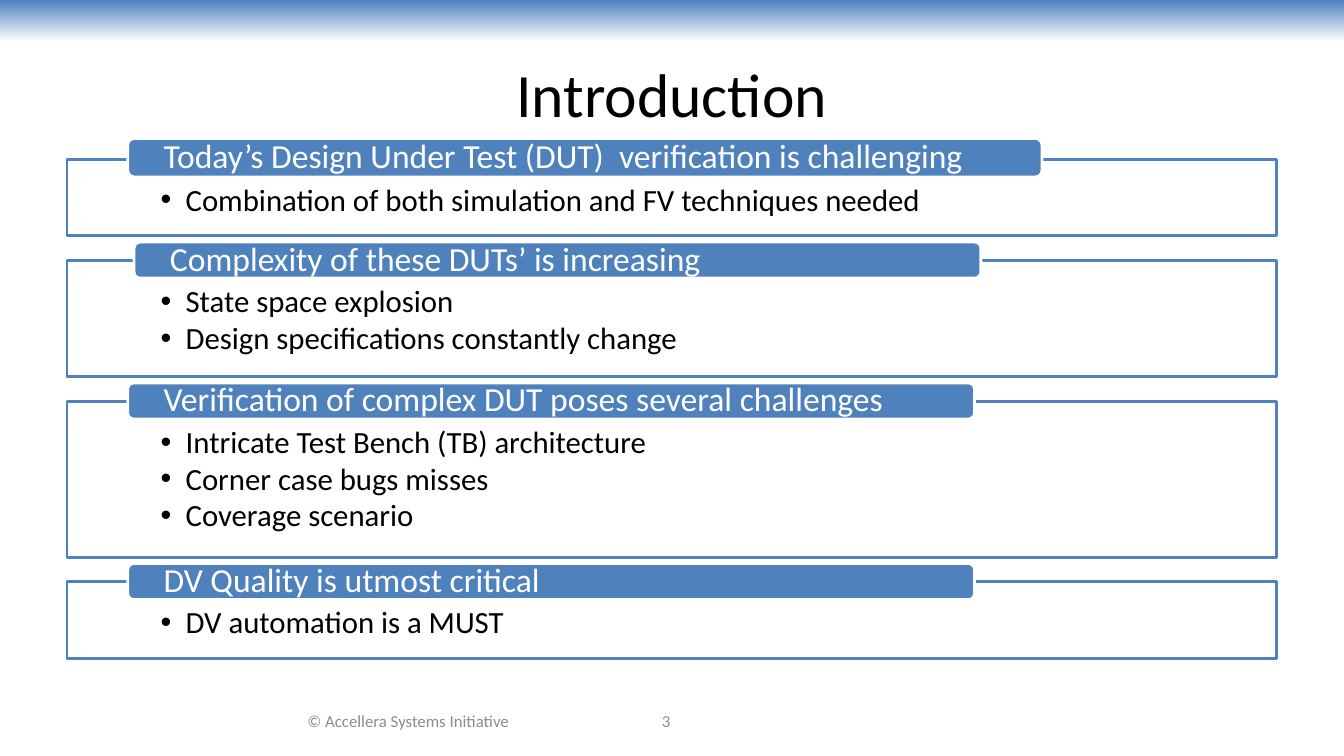
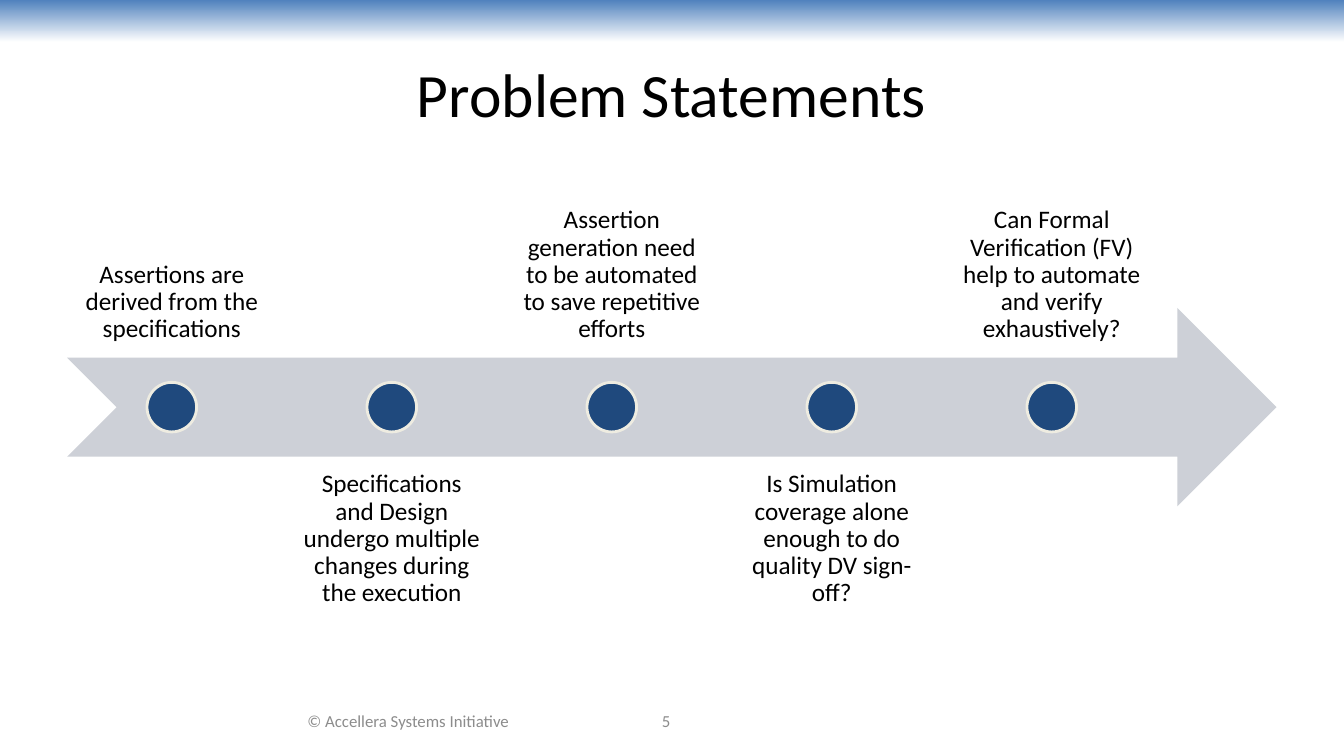
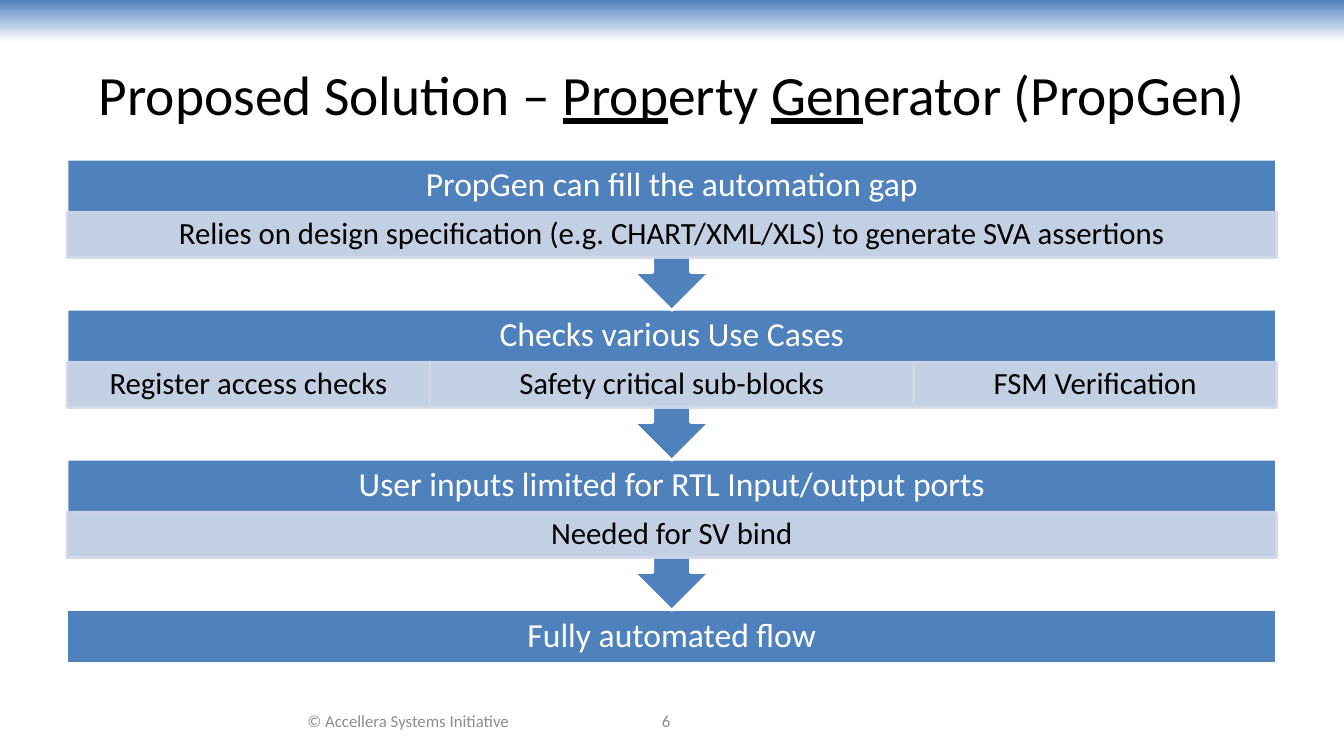
from lxml.etree import SubElement
from pptx import Presentation
from pptx.dml.color import RGBColor
from pptx.enum.shapes import MSO_SHAPE
from pptx.enum.text import MSO_ANCHOR, MSO_AUTO_SIZE, PP_ALIGN
from pptx.oxml.ns import qn
from pptx.util import Cm, Pt

COLORS = {
    "blue": "4F81BD", "navy": "1F497D", "cream": "EEECE1", "pale": "D0D8E8",
    "arrow": "CDD0D7", "footer": "8C8C8C", "white": "FFFFFF", "black": "000000",
}
FONT = "Calibri"
PAGE_WIDTH, PAGE_HEIGHT = 33.87, 19.05
LEFT, TOP, WIDTH = 1.69, 4.01, 30.48
FOOTER = "© Accellera Systems Initiative"

TOPICS = [
    ("Today’s Design Under Test (DUT)  verification is challenging", (3.22, 23.04, 0.97),
     ["Combination of both simulation and FV techniques needed"]),
    ("Complexity of these DUTs’ is increasing", (3.38, 21.34, 0.91),
     ["State space explosion", "Design specifications constantly change"]),
    ("Verification of complex DUT poses several challenges", (3.22, 21.34, 0.91),
     ["Intricate Test Bench (TB) architecture", "Corner case bugs misses", "Coverage scenario"]),
    ("DV Quality is utmost critical", (3.22, 21.34, 0.91),
     ["DV automation is a MUST"]),
]
PROBLEMS = [
    "Assertions are derived from the specifications",
    "Specifications and Design undergo multiple changes during the execution",
    "Assertion generation need to be automated to save repetitive efforts",
    "Is Simulation coverage alone enough to do quality DV sign-off?",
    "Can Formal Verification (FV) help to automate and verify exhaustively?",
]
SOLUTION_TITLE = [("Proposed Solution – ", False), ("Prop", True), ("erty ", False),
                  ("Gen", True), ("erator (PropGen)", False)]
STEPS = [
    ("PropGen can fill the automation gap",
     [("Relies on design specification (e.g. CHART/XML/XLS) to generate SVA assertions", 1)]),
    ("Checks various Use Cases",
     [("Register access checks", 0.3), ("Safety critical sub-blocks", 0.4), ("FSM Verification", 0.3)]),
    ("User inputs limited for RTL Input/output ports", [("Needed for SV bind", 1)]),
    ("Fully automated flow", []),
]


def rgb(name):
    return RGBColor.from_string(COLORS[name])


def add_block(page, kind, left, top, width, height, fill, line=None):
    block = page.shapes.add_shape(kind, Cm(left), Cm(top), Cm(width), Cm(height))
    block.shadow.inherit = False
    block.fill.solid()
    block.fill.fore_color.rgb = rgb(fill)
    if line:
        block.line.color.rgb = rgb(line)
        block.line.width = Pt(2)
    else:
        block.line.fill.background()
    return block


def make_translucent(block, percent):
    for color in block._element.spPr.iter(qn("a:srgbClr")):
        SubElement(color, qn("a:alpha"), val=str(percent * 1000))


def set_font(para, size, color):
    para.font.name = FONT
    para.font.size = Pt(size)
    para.font.color.rgb = rgb(color)


def write(box, lines, size, color, align=PP_ALIGN.CENTER, anchor=MSO_ANCHOR.MIDDLE,
          insets=(0.25, 0, 0.25, 0), spacing=0.9, bullets=False):
    frame = box.text_frame
    frame.word_wrap = True
    frame.vertical_anchor = anchor
    frame.margin_left, frame.margin_top, frame.margin_right, frame.margin_bottom = map(Cm, insets)
    for index, line in enumerate(lines):
        para = frame.paragraphs[0] if index == 0 else frame.add_paragraph()
        para.text = line
        para.alignment = align
        para.line_spacing = spacing
        if bullets:
            para.space_after = Pt(2.6)
            props = para._p.get_or_add_pPr()
            props.set("marL", str(Cm(0.63)))
            props.set("indent", str(-Cm(0.63)))
            SubElement(props, qn("a:buFont"), typeface="Arial")
            SubElement(props, qn("a:buChar"), char="•")
        set_font(para, size, color)


def add_text(page, left, top, width, height, text, size, color, **style):
    box = page.shapes.add_textbox(Cm(left), Cm(top), Cm(width), Cm(height))
    write(box, [text], size, color, **style)


def add_page(deck, title_runs, number, title_size=44):
    page = deck.slides.add_slide(deck.slide_layouts[5])
    band = add_block(page, MSO_SHAPE.RECTANGLE, 0, 0, PAGE_WIDTH, 1.06, "blue")
    band.fill.gradient()
    band.fill.gradient_angle = 270
    for stop, color, position in zip(band.fill.gradient_stops, ("blue", "white"), (0, 1)):
        stop.color.rgb = rgb(color)
        stop.position = position

    title = page.shapes.title
    title.left, title.top, title.width, title.height = Cm(LEFT), Cm(0.76), Cm(WIDTH), Cm(3.18)
    frame = title.text_frame
    frame.auto_size = MSO_AUTO_SIZE.NONE
    frame.vertical_anchor = MSO_ANCHOR.MIDDLE
    para = frame.paragraphs[0]
    para.alignment = PP_ALIGN.CENTER
    for text, underlined in title_runs:
        span = para.add_run()
        span.text = text
        if underlined:
            span.font.underline = True
    set_font(para, title_size, "black")

    for left, width, text in ((6.2, 8.18, FOOTER), (13.54, 6.5, str(number))):
        add_text(page, left, 17.65, width, 1.02, text, 12, "footer", spacing=1)
    return page


def add_introduction(deck):
    page = add_page(deck, [("Introduction", False)], 3)
    top = TOP
    for heading, (tab_left, tab_width, tab_height), bullets in TOPICS:
        height = 0.93 + len(bullets)
        panel = add_block(page, MSO_SHAPE.RECTANGLE, LEFT, top, WIDTH, height, "white", "blue")
        write(panel, bullets, 22, "black", PP_ALIGN.LEFT, MSO_ANCHOR.TOP,
              (2.36, 0.64, 2.36, 0.43), bullets=True)
        tab = add_block(page, MSO_SHAPE.ROUNDED_RECTANGLE, tab_left, top + 0.45 - tab_height,
                        tab_width, tab_height, "blue", "white")
        write(tab, [heading], 24, "white", PP_ALIGN.LEFT, insets=(0.86, 0, 0.86, 0))
        top += height + 0.62


def add_problems(deck):
    page = add_page(deck, [("Problem Statements", False)], 5)
    label_width, label_height, dot = 5.28, 5, 1.25
    arrow_top = TOP + 0.75 * label_height
    add_block(page, MSO_SHAPE.NOTCHED_RIGHT_ARROW, LEFT, arrow_top, WIDTH, label_height, "arrow")
    for index, problem in enumerate(PROBLEMS):
        left = LEFT + index * label_width * 1.05
        below = index % 2 == 1
        add_text(page, left, TOP + below * 1.5 * label_height, label_width, label_height,
                 problem, 18, "black", insets=(0.36,) * 4,
                 anchor=MSO_ANCHOR.TOP if below else MSO_ANCHOR.BOTTOM)
        add_block(page, MSO_SHAPE.OVAL, left + (label_width - dot) / 2,
                  arrow_top + (label_height - dot) / 2, dot, dot, "navy", "cream")


def add_solution(deck):
    page = add_page(deck, SOLUTION_TITLE, 6, 39.6)
    pitch, header_height, detail_height = 3.78, 1.34, 1.14
    for index, (heading, details) in reversed(list(enumerate(STEPS))):
        top = TOP + index * pitch
        if details:
            kind, height, reserve = MSO_SHAPE.DOWN_ARROW_CALLOUT, 3.81, detail_height
        else:
            kind, height, reserve = MSO_SHAPE.RECTANGLE, 1.37, 0
        step = add_block(page, kind, LEFT, top, WIDTH, height, "blue", "white")
        write(step, [heading], 24, "white", insets=(0.48, 0, 0.48, reserve))
        left = LEFT
        for text, share in details:
            detail = add_block(page, MSO_SHAPE.RECTANGLE, left, top + header_height,
                               WIDTH * share, detail_height, "pale", "pale")
            make_translucent(detail, 90)
            write(detail, [text], 22, "black", insets=(0.43, 0.07, 0.43, 0.07))
            left += WIDTH * share


def main():
    deck = Presentation()
    deck.slide_width, deck.slide_height = Cm(PAGE_WIDTH), Cm(PAGE_HEIGHT)
    add_introduction(deck)
    add_problems(deck)
    add_solution(deck)
    deck.save("out.pptx")


if __name__ == "__main__":
    main()
